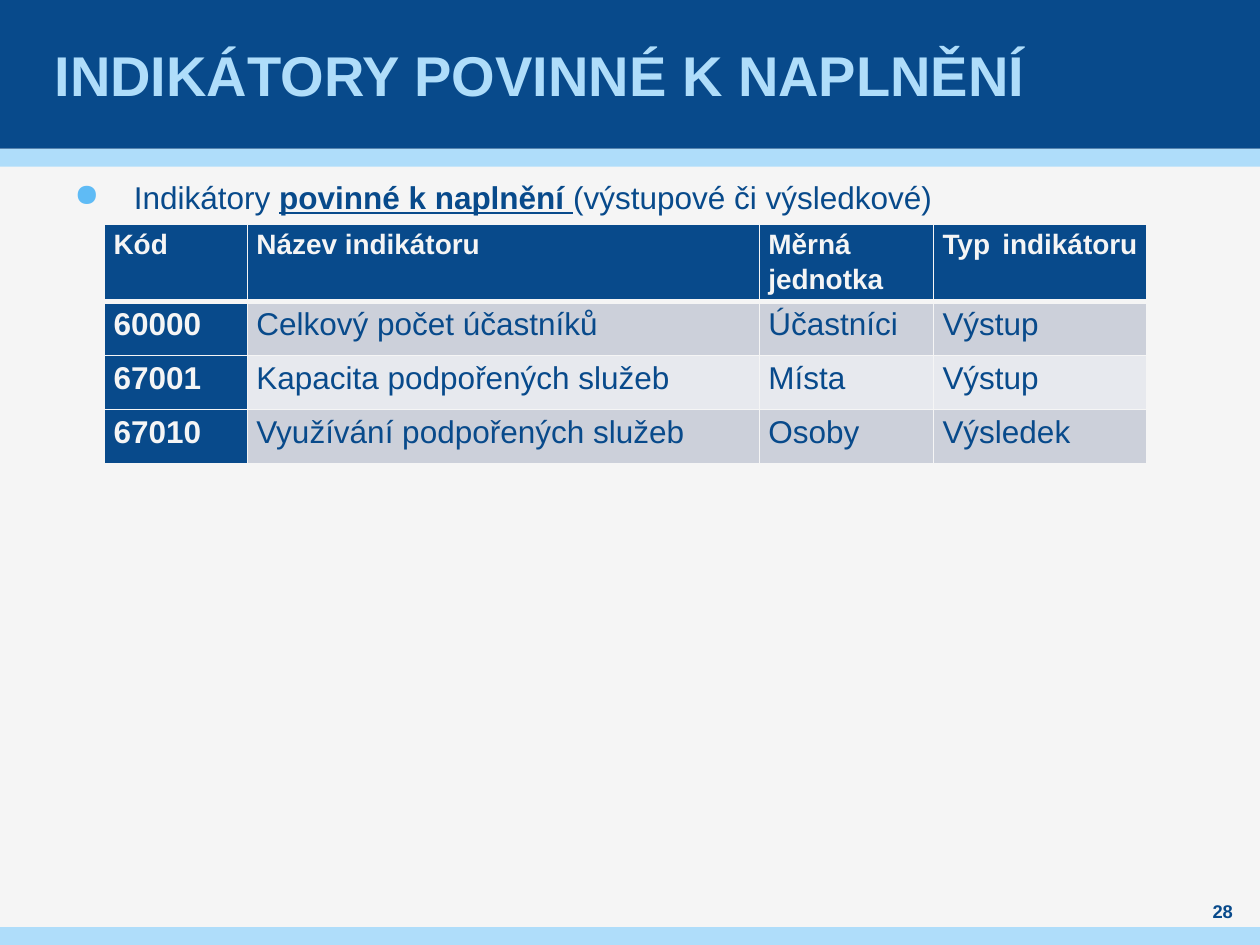
"""Build a slide with a table of mandatory indicators."""
from lxml.etree import SubElement
from pptx import Presentation
from pptx.dml.color import RGBColor
from pptx.enum.shapes import MSO_SHAPE
from pptx.enum.text import MSO_ANCHOR, PP_ALIGN
from pptx.oxml.ns import qn
from pptx.util import Cm, Pt

NAVY = RGBColor(0x08, 0x4A, 0x8B)
SKY = RGBColor(0xAF, 0xDD, 0xFA)
DOT = RGBColor(0x5F, 0xBB, 0xF5)
PAPER = RGBColor(0xF5, 0xF5, 0xF5)
DARK = RGBColor(0xCC, 0xD0, 0xDA)
LIGHT = RGBColor(0xE7, 0xE9, 0xEE)

HEADS = ["Kód", "Název indikátoru ", "Měrná jednotka ", "Typ indikátoru "]
ROWS = [
    ["60000", "Celkový počet účastníků", "Účastníci", "Výstup"],
    ["67001", "Kapacita podpořených služeb", "Místa", "Výstup"],
    ["67010", "Využívání podpořených služeb", "Osoby", "Výsledek"],
]


class Deck:
    def __init__(self, font):
        self.font = font
        self.show = Presentation()
        self.show.slide_width, self.show.slide_height = Cm(25.4), Cm(19.05)
        self.slide = self.show.slides.add_slide(self.show.slide_layouts[6])
        back = self.slide.background.fill
        back.solid()
        back.fore_color.rgb = PAPER

    def style(self, para, size, color, bold=None):
        font = para.font
        font.name, font.size, font.bold = self.font, Pt(size), bold
        font.color.rgb = color

    def band(self, top, high, color):
        bar = self.slide.shapes.add_shape(
            MSO_SHAPE.RECTANGLE, 0, Cm(top), self.show.slide_width, Cm(high))
        bar.shadow.inherit = False
        bar.fill.solid()
        bar.fill.fore_color.rgb = color
        bar.line.fill.background()

    def text(self, box, size, color, words="", bold=None, side=0,
             anchor=MSO_ANCHOR.MIDDLE, align=PP_ALIGN.LEFT):
        frame = self.slide.shapes.add_textbox(*map(Cm, box)).text_frame
        frame.word_wrap = True
        frame.vertical_anchor = anchor
        frame.margin_left = frame.margin_right = Cm(side)
        frame.margin_top = frame.margin_bottom = 0
        para = frame.paragraphs[0]
        para.text = words
        para.alignment = align
        self.style(para, size, color, bold)
        return para

    def bullet(self, box, parts):
        para = self.text(box, 18, NAVY, anchor=MSO_ANCHOR.TOP)
        para.line_spacing = Pt(28.8)
        para.space_before = para.space_after = Pt(6)
        for words, strong in parts:
            run = para.add_run()
            run.text = words
            run.font.bold = run.font.underline = strong
        props = para._p.get_or_add_pPr()
        props.set("marL", str(Cm(1.2)))
        props.set("indent", str(-Cm(1.2)))
        tint = SubElement(props, qn("a:buClr"))
        SubElement(tint, qn("a:srgbClr"), val=str(DOT))
        SubElement(props, qn("a:buChar"), char="●")
        props.append(props.find(qn("a:defRPr")))

    def edges(self, cell, top, base):
        props = cell._tc.get_or_add_tcPr()
        for side, width in zip("LRTB", (1, 1, top, base)):
            line = SubElement(props, qn("a:ln" + side), w=str(Pt(width)))
            fill = SubElement(line, qn("a:solidFill"))
            SubElement(fill, qn("a:srgbClr"), val=str(PAPER))

    def cell(self, cell, words, row, col):
        head = row == 0
        key = head or col == 0
        self.edges(cell, 3 if row == 1 else 1, 3 if head else 1)
        cell.fill.solid()
        cell.fill.fore_color.rgb = NAVY if key else DARK if row % 2 else LIGHT
        cell.margin_left = cell.margin_right = Cm(0.18)
        cell.margin_top = cell.margin_bottom = 0
        para = cell.text_frame.paragraphs[0]
        para.text = words
        para.alignment = PP_ALIGN.JUSTIFY if head else PP_ALIGN.LEFT
        para.line_spacing = 1.15
        para.space_after = Pt(6)
        self.style(para, 16 if head else 18, PAPER if key else NAVY, key)

    def table(self, left, top, wide, high, rows):
        grid = self.slide.shapes.add_table(
            len(rows), len(wide), Cm(left), Cm(top),
            Cm(sum(wide)), Cm(high * len(rows))).table
        for col, width in zip(grid.columns, wide):
            col.width = Cm(width)
        for r, row in enumerate(rows):
            grid.rows[r].height = Cm(high)
            for c, words in enumerate(row):
                self.cell(grid.cell(r, c), words, r, c)


def main():
    deck = Deck("Arial")
    deck.band(3, 0.36, SKY)
    deck.band(0, 3, NAVY)
    deck.band(18.69, 0.36, SKY)
    deck.text((1, 0, 23.4, 3), 32, SKY, "INDIKÁTORY POVINNÉ K NAPLNĚNÍ",
              bold=True, side=0.1)
    deck.bullet((1.5, 3.33, 22.4, 13.67), [
        ("Indikátory ", False),
        ("povinné k naplnění ", True),
        ("(výstupové či výsledkové)", False),
    ])
    deck.text((24, 18.11, 1.3, 0.51), 10.5, NAVY, "28", bold=True,
              align=PP_ALIGN.CENTER)
    deck.table(2.11, 4.52, (2.88, 10.32, 3.51, 4.29), 1.09, [HEADS] + ROWS)
    deck.show.save("out.pptx")


if __name__ == "__main__":
    main()
